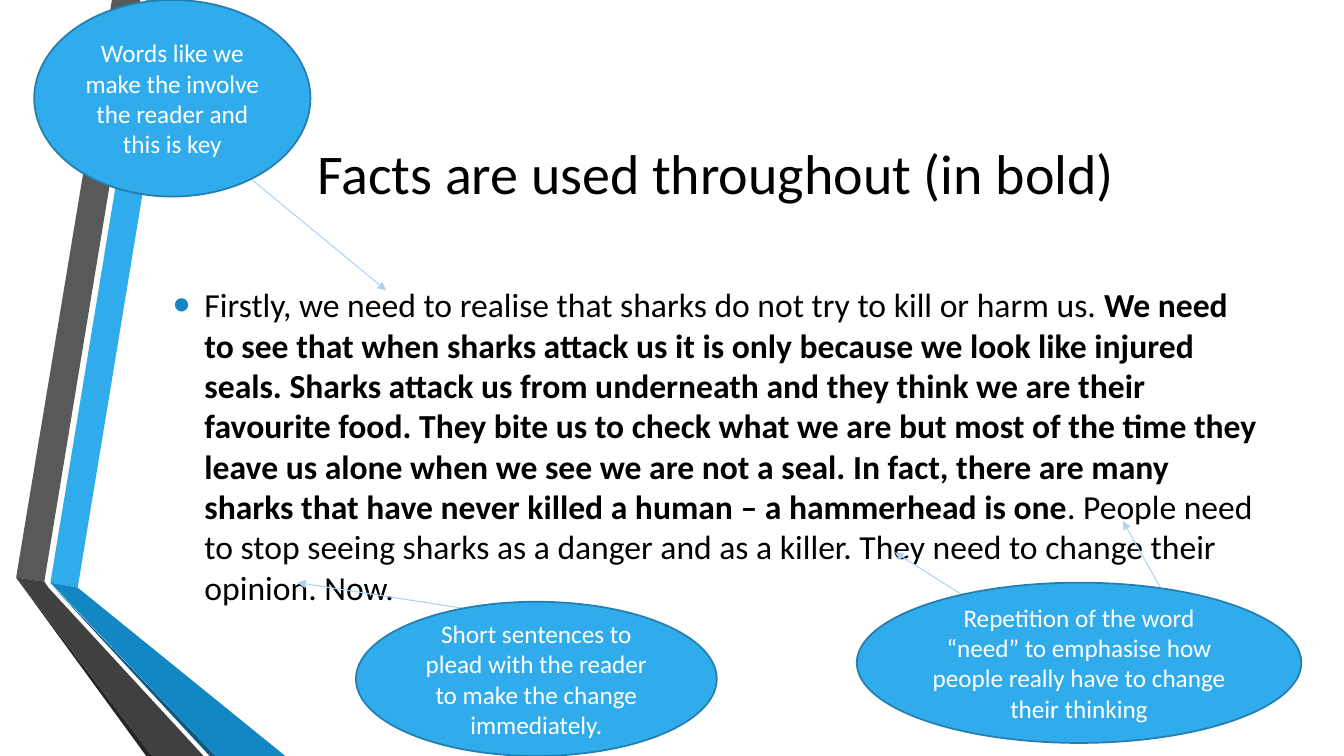
from lxml import etree
from pptx import Presentation
from pptx import util as u
from pptx.dml.color import RGBColor
from pptx.enum import shapes, text
from pptx.oxml.ns import qn

WIDTH, HEIGHT = u.Inches(13.33), u.Inches(7.5)
FONT = "Calibri"
BLACK = RGBColor(0x00, 0x00, 0x00)
WHITE = RGBColor(0xFF, 0xFF, 0xFF)
SKY = RGBColor(0x30, 0xAC, 0xEC)
BLUE = RGBColor(0x12, 0x87, 0xC3)
NAVY = RGBColor(0x0C, 0x5A, 0x82)
OUTLINE = RGBColor(0x24, 0x7F, 0xAF)
PALE = RGBColor(0xAE, 0xD2, 0xF4)
GREY = RGBColor(0x59, 0x59, 0x59)
CHARCOAL = RGBColor(0x40, 0x40, 0x40)
INK = RGBColor(0x26, 0x26, 0x26)

RIBBONS = [
    (SKY, [(3.75, 77.07), (5.78, 77.73), (12.98, 0), (10.88, 0)]),
    (GREY, [(10.43, 0), (8.33, 0), (1.2, 76.4), (3.3, 76.93)]),
    (INK, [(1.2, 76.4), (10.88, 100), (11.33, 100)]),
    (NAVY, [(3.75, 77.2), (15.6, 100), (16.05, 100)]),
    (BLUE, [(3.75, 77.07), (16.05, 100), (21.23, 100), (5.78, 77.73)]),
    (CHARCOAL, [(15.15, 100), (3.6, 77.73), (3.3, 76.93), (1.2, 76.4), (11.33, 100)]),
]

TITLE = "Facts are used throughout (in bold)"
TITLE_BOX = (12.15, 10, 82.2, 25.6)
BODY_BOX = (12.15, 38.93, 82.2, 45.6)
BODY = [
    ("Firstly, we need to realise that sharks do not try to kill or harm us. ", False),
    ("We need to see that when sharks attack us it is only because we look like "
     "injured seals. Sharks attack us from underneath and they think we are their "
     "favourite food. They bite us to check what we are but most of the time they "
     "leave us alone when we see we are not a seal. In fact, there are many sharks "
     "that have never killed a human – a hammerhead is one", True),
    (". People need to stop seeing sharks as a danger and as a killer. "
     "They need to change their opinion. Now.", False),
]

CALLOUTS = [
    ("Repetition of the word “need” to emphasise how people really have to change "
     "their thinking", (63.75, 77.07, 33.08, 21.2),
     [((89.48, 87.6), (83.55, 68.93)), ((79.5, 87.6), (66.6, 73.07))]),
    ("Short sentences to plead with the reader to make the change immediately.",
     (26.48, 79.6, 26.85, 20.4), [((42.9, 82.8), (22.13, 77.07))]),
    ("Words like we make the involve the reader and this is key",
     (2.55, 0, 20.55, 26), [((15.53, 19.07), (28.73, 38.4))]),
]


def point(across, down):
    return round(WIDTH * across / 100), round(HEIGHT * down / 100)


def box(left, top, width, height):
    return point(left, top) + point(width, height)


def format_run(run, size, color, bold=False):
    run.font.name = FONT
    run.font.size = u.Pt(size)
    run.font.color.rgb = color
    run.font.bold = bold


def add_ribbon(slide, color, corners):
    points = [point(*corner) for corner in corners]
    builder = slide.shapes.build_freeform(*points[0])
    builder.add_line_segments(points[1:])
    shape = builder.convert_to_shape()
    shape.shadow.inherit = False
    shape.fill.solid()
    shape.fill.fore_color.rgb = color
    shape.line.fill.background()


def set_title(slide):
    title = slide.shapes.title
    title.left, title.top, title.width, title.height = box(*TITLE_BOX)
    title.text_frame.text = TITLE
    title.text_frame.vertical_anchor = text.MSO_ANCHOR.MIDDLE
    paragraph = title.text_frame.paragraphs[0]
    paragraph.alignment = text.PP_ALIGN.CENTER
    format_run(paragraph.runs[0], 40, BLACK)


def add_bullet(paragraph):
    properties = paragraph._p.get_or_add_pPr()
    properties.set("marL", str(u.Inches(0.31)))
    properties.set("indent", str(-u.Inches(0.31)))
    color = etree.SubElement(properties, qn("a:buClr"))
    etree.SubElement(color, qn("a:srgbClr"), val=str(BLUE))
    etree.SubElement(properties, qn("a:buSzPct"), val="145000")
    etree.SubElement(properties, qn("a:buFont"), typeface="Arial")
    etree.SubElement(properties, qn("a:buChar"), char="•")


def add_body(slide):
    frame = slide.shapes.add_textbox(*box(*BODY_BOX)).text_frame
    frame.word_wrap = True
    frame.vertical_anchor = text.MSO_ANCHOR.MIDDLE
    frame.margin_bottom = u.Inches(0.47)
    paragraph = frame.paragraphs[0]
    add_bullet(paragraph)
    for words, bold in BODY:
        run = paragraph.add_run()
        run.text = words
        format_run(run, 24, BLACK, bold)


def add_arrow(slide, start, end):
    arrow = slide.shapes.add_connector(
        shapes.MSO_CONNECTOR.STRAIGHT, *point(*start), *point(*end))
    arrow.line.color.rgb = PALE
    arrow.line.width = u.Pt(0.75)
    etree.SubElement(arrow.line._get_or_add_ln(), qn("a:tailEnd"), type="triangle")
    etree.SubElement(arrow._element.spPr, qn("a:effectLst"))


def add_callout(slide, words, place):
    shape = slide.shapes.add_shape(shapes.MSO_SHAPE.OVAL, *box(*place))
    shape.shadow.inherit = False
    shape.fill.solid()
    shape.fill.fore_color.rgb = SKY
    shape.line.color.rgb = OUTLINE
    shape.line.width = u.Pt(1.25)
    frame = shape.text_frame
    frame.text = words
    frame.word_wrap = True
    frame.vertical_anchor = text.MSO_ANCHOR.MIDDLE
    paragraph = frame.paragraphs[0]
    paragraph.alignment = text.PP_ALIGN.CENTER
    format_run(paragraph.runs[0], 18, WHITE)


def main():
    presentation = Presentation()
    presentation.slide_width, presentation.slide_height = WIDTH, HEIGHT
    slide = presentation.slides.add_slide(presentation.slide_layouts.get_by_name("Title Only"))
    for color, corners in RIBBONS:
        add_ribbon(slide, color, corners)
    set_title(slide)
    add_body(slide)
    for words, place, arrows in CALLOUTS:
        for start, end in arrows:
            add_arrow(slide, start, end)
        add_callout(slide, words, place)
    presentation.save("out.pptx")


if __name__ == "__main__":
    main()
